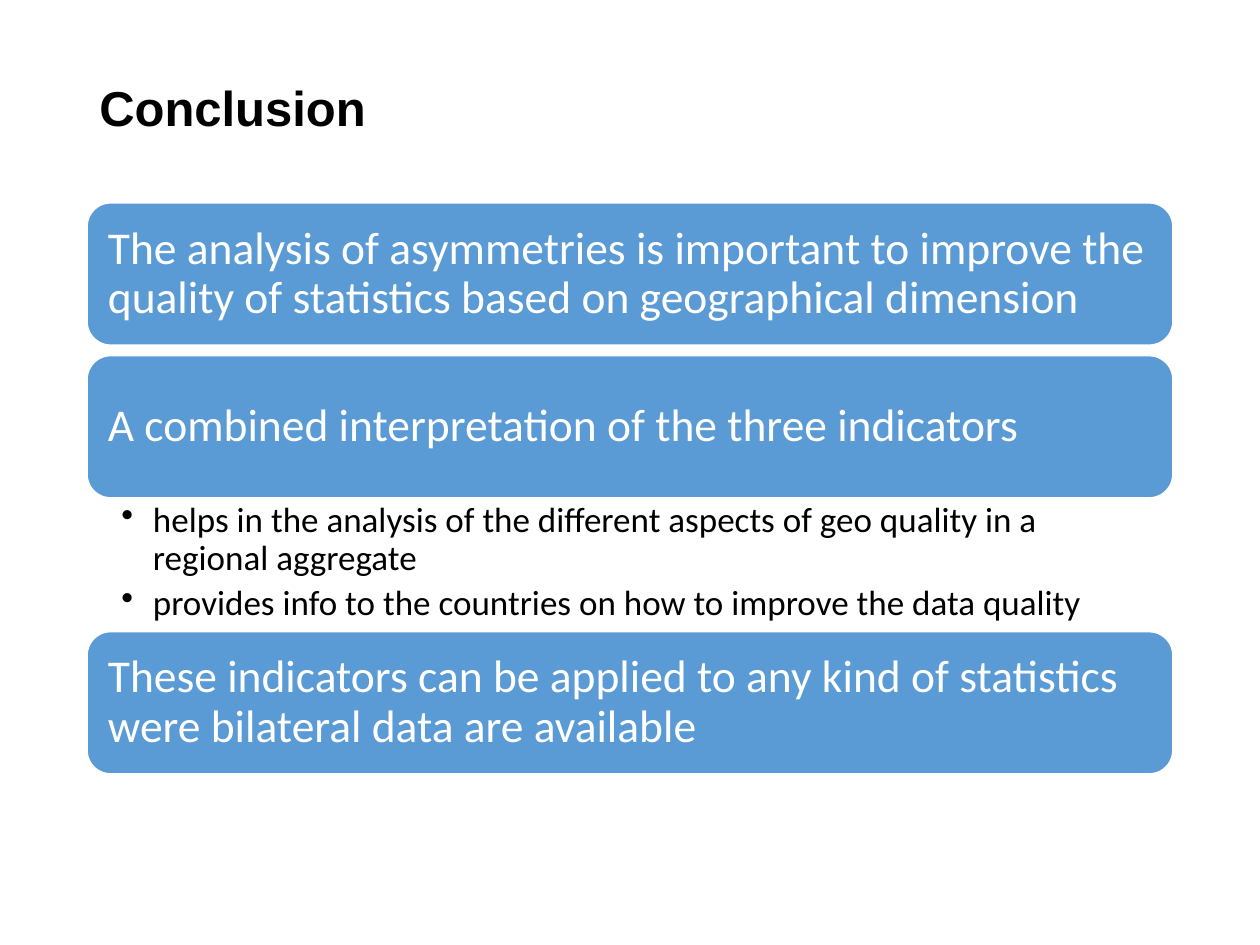
"""Build the conclusion slide: a stack of statement bars with bullets."""
from lxml import etree
from pptx import Presentation
from pptx.dml.color import RGBColor
from pptx.enum import shapes, text
from pptx.oxml.ns import qn
from pptx.util import Pt

TITLE = "Conclusion"
STATEMENTS = [
    ("The analysis of asymmetries is important to improve the quality of "
     "statistics based on geographical dimension", []),
    ("A combined interpretation of the three indicators", [
        "helps in the analysis of the different aspects of geo quality in a regional aggregate",
        "provides info to the countries on how to improve the data quality",
    ]),
    ("These indicators can be applied to any kind of statistics were "
     "bilateral data are available", []),
]
LEFT, WIDTH = 49.7, 620.6
STACK_TOP, BAR_HEIGHT, BULLETS_HEIGHT, GAP = 115.9, 81.4, 76.3, 5.9
BLUE, WHITE, BLACK = "5B9BD5", "FFFFFF", "000000"


def rgb(value):
    """Return the colour for a hex string."""
    return RGBColor.from_string(value)


def write(s, lines, font, size, color, anchor, insets, bold=False, after=0, bullets=False):
    """Fill a shape with formatted paragraphs."""
    tf = s.text_frame
    tf.word_wrap = True
    tf.vertical_anchor = anchor
    tf.margin_left, tf.margin_top, tf.margin_right, tf.margin_bottom = map(Pt, insets)
    tf.text = "\n".join(lines)
    for p in tf.paragraphs:
        p.alignment = text.PP_ALIGN.LEFT
        p.line_spacing = 0.9
        p.space_after = Pt(after)
        if bullets:
            pPr = p._p.get_or_add_pPr()
            pPr.set("marL", str(Pt(18)))
            pPr.set("indent", str(Pt(-18)))
            etree.SubElement(pPr, qn("a:buChar")).set("char", "•")
        for r in p.runs:
            r.font.name, r.font.size, r.font.bold = font, Pt(size), bold
            r.font.color.rgb = rgb(color)


def add_bar(slide, top, statement):
    """Add one rounded statement bar."""
    s = slide.shapes.add_shape(shapes.MSO_SHAPE.ROUNDED_RECTANGLE,
                               Pt(LEFT), Pt(top), Pt(WIDTH), Pt(BAR_HEIGHT))
    s.shadow.inherit = False
    s.fill.solid()
    s.fill.fore_color.rgb = rgb(BLUE)
    s.line.color.rgb = rgb(WHITE)
    s.line.width = Pt(1)
    write(s, [statement], "Calibri", 26, WHITE, text.MSO_ANCHOR.MIDDLE, (8, 8, 8, 8))


def add_text(slide, top, height, lines, *style, **options):
    """Add a text box as wide as the bars."""
    s = slide.shapes.add_textbox(Pt(LEFT), Pt(top), Pt(WIDTH), Pt(height))
    write(s, lines, *style, **options)


def main():
    """Lay out the title and the stack, then save."""
    prs = Presentation()
    prs.slide_width, prs.slide_height = Pt(720), Pt(540)
    slide = prs.slides.add_slide(prs.slide_layouts[6])
    add_text(slide, 28.8, 68.4, [TITLE], "Arial", 28, BLACK,
             text.MSO_ANCHOR.MIDDLE, (7.2, 3.6, 7.2, 3.6), bold=True)
    top = STACK_TOP
    for statement, points in STATEMENTS:
        add_bar(slide, top, statement)
        top += BAR_HEIGHT
        if points:
            add_text(slide, top, BULLETS_HEIGHT, points, "Calibri", 20, BLACK,
                     text.MSO_ANCHOR.TOP, (19.7, 2.6, 14.4, 2.6), after=4, bullets=True)
            top += BULLETS_HEIGHT
        else:
            top += GAP
    prs.save("out.pptx")


if __name__ == "__main__":
    main()
